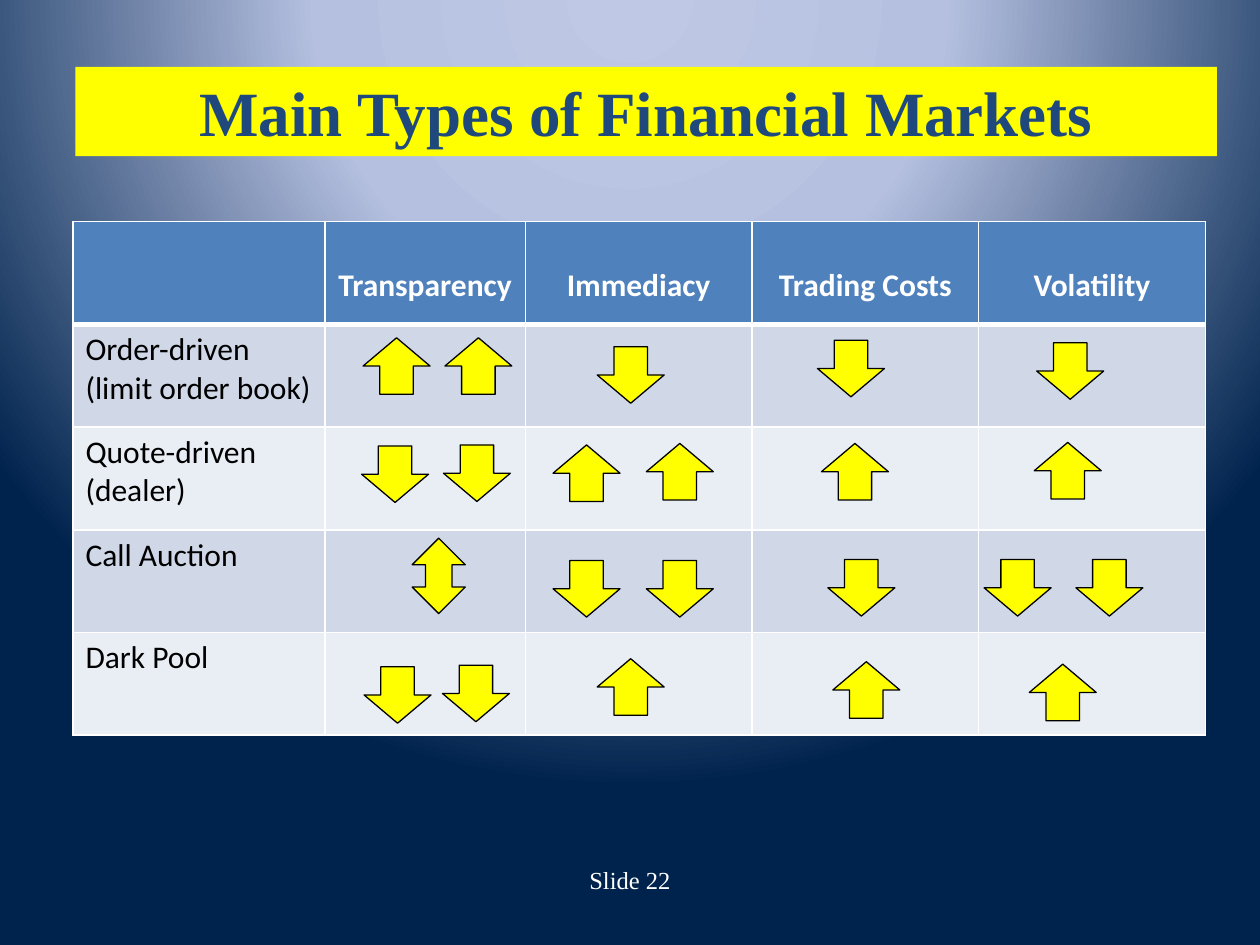
from dataclasses import dataclass

from pptx import Presentation
from pptx.dml.color import RGBColor
from pptx.enum.shapes import MSO_SHAPE
from pptx.enum.text import MSO_ANCHOR, PP_ALIGN
from pptx.oxml import parse_xml
from pptx.oxml.ns import nsdecls, qn
from pptx.util import Cm, Pt

UP, DOWN, BOTH = MSO_SHAPE.UP_ARROW, MSO_SHAPE.DOWN_ARROW, MSO_SHAPE.UP_DOWN_ARROW
LEFT, MID = PP_ALIGN.LEFT, PP_ALIGN.CENTER
CENTER = MSO_ANCHOR.MIDDLE


@dataclass(frozen=True)
class Theme:
    glow: tuple = ((0, "BFC9E5"), (40, "B5C0E0"), (100, "00234D"))
    white: str = "FFFFFF"
    black: str = "000000"
    yellow: str = "FFFF00"
    navy: str = "1F497D"
    head: str = "4F81BD"
    bands: tuple = ("D0D8E8", "E9EDF4")
    serif: str = "Times New Roman"
    sans: str = "Calibri"
    title: int = 36
    body: int = 18
    foot: int = 14


THEME = Theme()

HEADS = ("", "Transparency", "Immediacy", "Trading Costs", "Volatility")
WIDTHS = (5.08, 4.04, 4.57, 4.57, 4.57)
ROW = 2.07

# Each market: label, then its arrows as (kind, left, top) in cm
MARKETS = (
    ("Order-driven (limit order book)", (
        (UP, 7.32, 6.81), (UP, 8.97, 6.81), (DOWN, 12.04, 6.99),
        (DOWN, 16.48, 6.86), (DOWN, 20.9, 6.91))),
    ("Quote-driven (dealer)", (
        (DOWN, 7.29, 8.99), (DOWN, 8.94, 8.97), (UP, 11.15, 8.97),
        (UP, 13.03, 8.94), (UP, 16.56, 8.94), (UP, 20.85, 8.92))),
    ("Call Auction", (
        (BOTH, 8.31, 10.85), (DOWN, 11.15, 11.3), (DOWN, 13.03, 11.3),
        (DOWN, 16.69, 11.28), (DOWN, 19.84, 11.28), (DOWN, 21.69, 11.28))),
    ("Dark Pool", (
        (DOWN, 7.34, 13.44), (DOWN, 8.92, 13.41), (UP, 12.04, 13.28),
        (UP, 16.79, 13.34), (UP, 20.75, 13.39))),
)


def paint(fill, tone):
    fill.solid()
    fill.fore_color.rgb = RGBColor.from_string(tone)


def write(frame, text, size=THEME.body, face=THEME.sans, tone=THEME.black,
          bold=False, align=LEFT):
    frame.word_wrap = True
    para = frame.paragraphs[0]
    para.alignment = align
    run = para.add_run()
    run.text = text
    font = run.font
    font.size, font.name, font.bold = Pt(size), face, bold
    font.color.rgb = RGBColor.from_string(tone)


def add_glow(slide):
    """Fill the background with a round gradient centred above the slide."""
    slide.background.fill.solid()
    back = slide._element.find(".//" + qn("p:bgPr"))
    stops = "".join(
        f'<a:gs pos="{pos * 1000}"><a:srgbClr val="{tone}"/></a:gs>'
        for pos, tone in THEME.glow)
    back[0] = parse_xml(
        f'<a:gradFill {nsdecls("a")} rotWithShape="1"><a:gsLst>{stops}</a:gsLst>'
        '<a:path path="circle"><a:fillToRect l="50000" t="-80000" '
        'r="50000" b="180000"/></a:path></a:gradFill>')


def add_title(slide, text):
    title = slide.shapes.title
    title.left, title.top = Cm(1.52), Cm(1.35)
    title.width, title.height = Cm(23.01), Cm(1.8)
    paint(title.fill, THEME.yellow)
    title.text_frame.vertical_anchor = CENTER
    write(title.text_frame, text, size=THEME.title, face=THEME.serif,
          tone=THEME.navy, bold=True, align=MID)


def edge(cell, top=1, base=1):
    """Draw white borders, with widths in points."""
    props = cell._tc.get_or_add_tcPr()
    for side, wide in (("L", 1), ("R", 1), ("T", top), ("B", base)):
        props.append(parse_xml(
            f'<a:ln{side} {nsdecls("a")} w="{Pt(wide)}"><a:solidFill>'
            f'<a:srgbClr val="{THEME.white}"/></a:solidFill></a:ln{side}>'))


def add_grid(slide):
    count = len(MARKETS) + 1
    grid = slide.shapes.add_table(
        count, len(HEADS), Cm(1.47), Cm(4.47), Cm(sum(WIDTHS)),
        Cm(ROW * count)).table
    for col, wide in zip(grid.columns, WIDTHS):
        col.width = Cm(wide)
    for row in grid.rows:
        row.height = Cm(ROW)
    for col, text in enumerate(HEADS):
        cell = grid.cell(0, col)
        edge(cell, base=3)
        paint(cell.fill, THEME.head)
        cell.margin_top = Cm(0.9)
        if text:
            write(cell.text_frame, text, tone=THEME.white, bold=True, align=MID)
    for row, (label, _) in enumerate(MARKETS, 1):
        for col in range(len(HEADS)):
            cell = grid.cell(row, col)
            edge(cell, top=3 if row == 1 else 1)
            paint(cell.fill, THEME.bands[(row - 1) % 2])
        write(grid.cell(row, 0).text_frame, label)


def add_arrow(slide, kind, left, top):
    wide, high = (1.07, 1.52) if kind == BOTH else (1.35, 1.14)
    arrow = slide.shapes.add_shape(kind, Cm(left), Cm(top), Cm(wide), Cm(high))
    arrow.shadow.inherit = False
    paint(arrow.fill, THEME.yellow)
    paint(arrow.line.fill, THEME.black)
    arrow.line.width = Pt(0.75)


def add_foot(slide, text):
    box = slide.shapes.add_textbox(Cm(10.06), Cm(17.32), Cm(5.28), Cm(1.14))
    write(box.text_frame, text, size=THEME.foot, face=THEME.serif,
          tone=THEME.white, align=MID)


def main():
    deck = Presentation()
    deck.slide_width, deck.slide_height = Cm(25.4), Cm(19.05)
    slide = deck.slides.add_slide(deck.slide_layouts[5])
    add_glow(slide)
    add_grid(slide)
    add_foot(slide, "Slide 22")
    for _, arrows in MARKETS:
        for arrow in arrows:
            add_arrow(slide, *arrow)
    add_title(slide, "Main Types of Financial Markets")
    deck.save("out.pptx")


if __name__ == "__main__":
    main()
